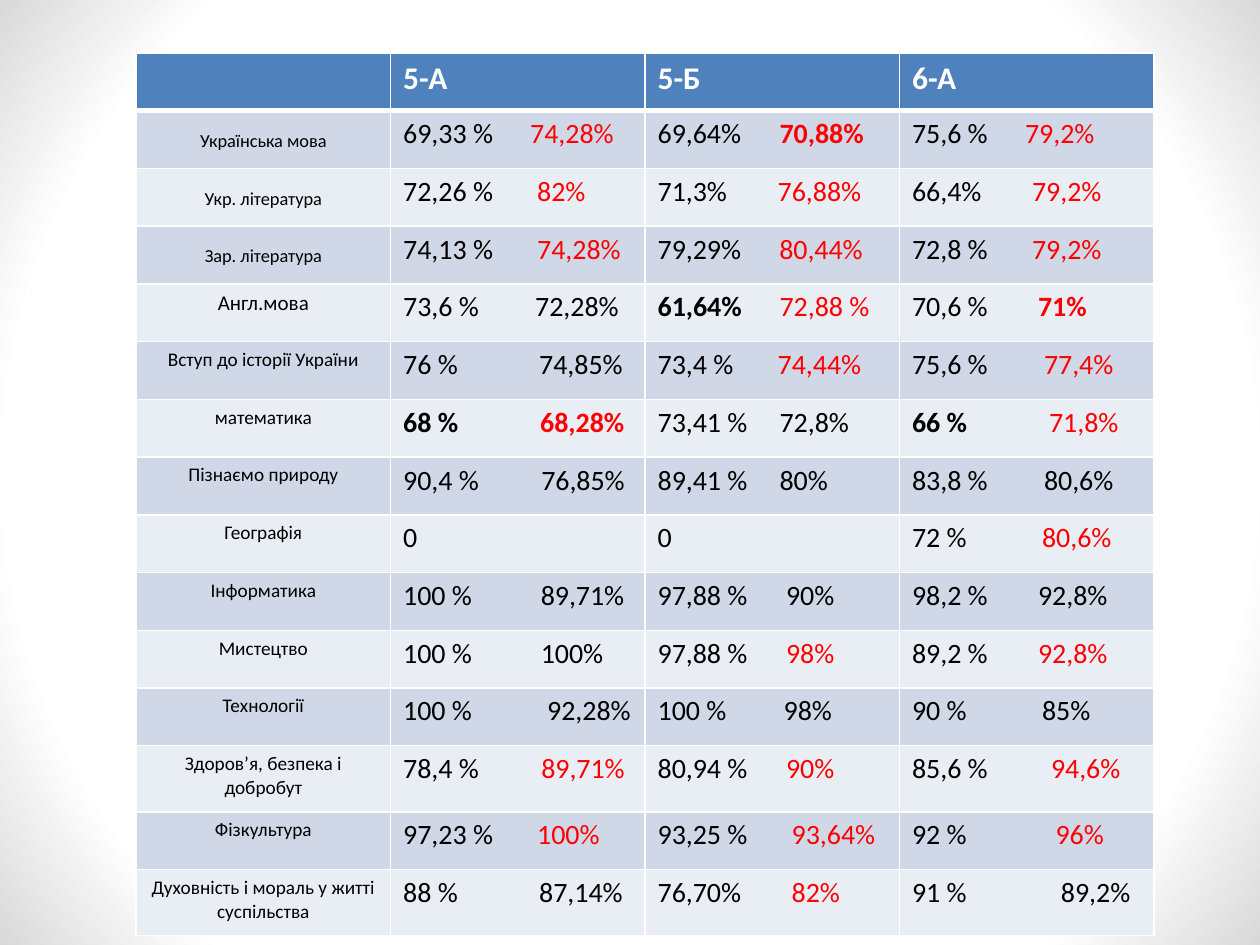
from dataclasses import dataclass
from typing import Optional

from lxml.etree import SubElement
from pptx import Presentation
from pptx.dml.color import RGBColor
from pptx.enum.text import MSO_ANCHOR, PP_ALIGN
from pptx.oxml.ns import qn
from pptx.util import Pt

COLORS = {
    "white": "FFFFFF",
    "edge": "D9D9D9",
    "header": "4F81BD",
    "odd": "D0D8E8",
    "even": "E9EDF4",
    "black": "000000",
    "red": "FF0000",
}
FONT = "Calibri"
LEFT, TOP, COL_W, ROW_H, TALL_H = 77.8, 30.2, 145.4, 33, 37.8
CLASSES = ["5-А", "5-Б", "6-А"]


@dataclass
class Score:
    before: str
    after: str = ""
    tab: float = 0
    color: str = "black"
    bold_before: bool = False
    bold_after: bool = False


@dataclass
class Subject:
    name: str
    scores: list[Score]
    size: float = 11
    height: float = ROW_H
    centered: bool = False


SUBJECTS = [
    Subject("Українська мова", [
        Score("69,33 %", "74,28%", 72.6, "red"),
        Score("69,64%", "70,88%", 69.7, "red", bold_after=True),
        Score("75,6 %", "79,2%", 64.6, "red")], size=10.5, centered=True),
    Subject("Укр. література", [
        Score("72,26 %", "82%", 76.6, "red"),
        Score("71,3%", "76,88%", 68.6, "red"),
        Score("66,4%", "79,2%", 68.6, "red")], size=10.5, centered=True),
    Subject("Зар. література", [
        Score("74,13 %", "74,28%", 76.6, "red"),
        Score("79,29%", "80,44%", 69.5, "red"),
        Score("72,8 %", "79,2%", 68.6, "red")], size=10.5, centered=True),
    Subject("Англ.мова", [
        Score("73,6 %", "72,28%", 75.4),
        Score("61,64%", "72,88 %", 69.7, "red", bold_before=True),
        Score("70,6 %", "71%", 72, "red", bold_after=True)], size=12),
    Subject("Вступ до історії України", [
        Score("76 %", "74,85%", 77.7),
        Score("73,4 %", "74,44%", 68.6, "red"),
        Score("75,6 %", "77,4%", 75.4, "red")]),
    Subject("математика", [
        Score("68 %", "68,28%", 78.3, "red", True, True),
        Score("73,41 %", "72,8%", 69.7),
        Score("66 %", "71,8%", 78.3, "red", bold_before=True)]),
    Subject("Пізнаємо природу", [
        Score("90,4 %", "76,85%", 78.9),
        Score("89,41 %", "80%", 69.7),
        Score("83,8 %", "80,6%", 75.4)]),
    Subject("Географія", [
        Score("0"),
        Score("0"),
        Score("72 %", "80,6%", 74.3, "red")]),
    Subject("Інформатика", [
        Score("100 %", "89,71%", 78.6),
        Score("97,88 %", "90%", 73.4),
        Score("98,2 %", "92,8%", 72)]),
    Subject("Мистецтво", [
        Score("100 %", "100%", 78.6),
        Score("97,88 %", "98%", 73.4, "red"),
        Score("89,2 %", "92,8%", 72, "red")]),
    Subject("Технології", [
        Score("100 %", "92,28%", 82.3),
        Score("100 %", "98%", 72),
        Score("90 %", "85%", 74.3)]),
    Subject("Здоров’я, безпека і добробут", [
        Score("78,4 %", "89,71%", 78.9, "red"),
        Score("80,94 %", "90%", 73.4, "red"),
        Score("85,6 %", "94,6%", 79.4, "red")], height=TALL_H),
    Subject("Фізкультура", [
        Score("97,23 %", "100%", 76.6, "red"),
        Score("93,25 %", "93,64%", 76.6, "red"),
        Score("92 %", "96%", 82, "red")]),
    Subject("Духовність і мораль у житті суспільства", [
        Score("88 %", "87,14%", 77.7),
        Score("76,70%", "82%", 76.6, "red"),
        Score("91 %", "89,2%", 85.1)], height=TALL_H),
]


def rgb(name: str) -> RGBColor:
    return RGBColor.from_string(COLORS[name])


def apply(target, formats: dict) -> None:
    for name, value in formats.items():
        setattr(target, name, value)


def add_run(p, text: str, size: float, color: str = "black", bold: bool = False) -> None:
    r = p.add_run()
    r.text = text
    apply(r.font, {"name": FONT, "size": Pt(size), "bold": bold})
    r.font.color.rgb = rgb(color)


def style_cell(cell, fill: str, row: int) -> None:
    tcPr = cell._tc.get_or_add_tcPr()
    thick = {0: "lnB", 1: "lnT"}.get(row)
    for side in ("lnL", "lnR", "lnT", "lnB"):
        ln = SubElement(tcPr, qn(f"a:{side}"), w=str(Pt(3 if side == thick else 1)))
        solid = SubElement(ln, qn("a:solidFill"))
        SubElement(solid, qn("a:srgbClr"), val=COLORS["white"])
    cell.fill.solid()
    cell.fill.fore_color.rgb = rgb(fill)


def write_name(cell, subject: Subject) -> None:
    p = cell.text_frame.paragraphs[0]
    p.alignment = PP_ALIGN.CENTER
    if subject.centered:
        apply(cell, {"vertical_anchor": MSO_ANCHOR.MIDDLE, "margin_left": Pt(5),
                     "margin_right": Pt(5), "margin_top": 0, "margin_bottom": 0})
        apply(p, {"line_spacing": 1.15, "space_after": Pt(10)})
    add_run(p, subject.name, subject.size)


def write_score(cell, score: Score) -> None:
    p = cell.text_frame.paragraphs[0]
    if not score.after:
        add_run(p, score.before, 16)
        return
    tabs = SubElement(p._p.get_or_add_pPr(), qn("a:tabLst"))
    SubElement(tabs, qn("a:tab"), pos=str(Pt(score.tab)), algn="l")
    add_run(p, score.before + "\t", 16, bold=score.bold_before)
    add_run(p, score.after, 16, score.color, score.bold_after)


def draw_background(s) -> None:
    fill = s.background.fill
    fill.gradient()
    for stop, (position, color) in zip(fill.gradient_stops, [(0.79, "white"), (1, "edge")]):
        stop.position = position
        stop.color.rgb = rgb(color)
    grad = next(s._element.iter(qn("a:gradFill")))
    grad.remove(grad.find(qn("a:lin")))
    circle = SubElement(grad, qn("a:path"), path="circle")
    SubElement(circle, qn("a:fillToRect"), l="50000", t="50000", r="50000", b="50000")


def draw_table(s, classes: list[str], subjects: list[Subject]) -> None:
    heights = [ROW_H] + [subject.height for subject in subjects]
    cols = len(classes) + 1
    tbl = s.shapes.add_table(len(heights), cols, Pt(LEFT), Pt(TOP),
                             Pt(COL_W * cols), Pt(sum(heights))).table
    for col in tbl.columns:
        col.width = Pt(COL_W)
    for i, height in enumerate(heights):
        tbl.rows[i].height = Pt(height)
        fill = "header" if i == 0 else "odd" if i % 2 else "even"
        for j in range(cols):
            style_cell(tbl.cell(i, j), fill, i)
    for j, name in enumerate(classes, 1):
        add_run(tbl.cell(0, j).text_frame.paragraphs[0], name, 18, "white", True)
    for i, subject in enumerate(subjects, 1):
        write_name(tbl.cell(i, 0), subject)
        for j, score in enumerate(subject.scores, 1):
            write_score(tbl.cell(i, j), score)


def main() -> None:
    prs = Presentation()
    apply(prs, {"slide_width": Pt(720), "slide_height": Pt(540)})
    s = prs.slides.add_slide(prs.slide_layouts[6])
    draw_background(s)
    draw_table(s, CLASSES, SUBJECTS)
    prs.save("out.pptx")


if __name__ == "__main__":
    main()
